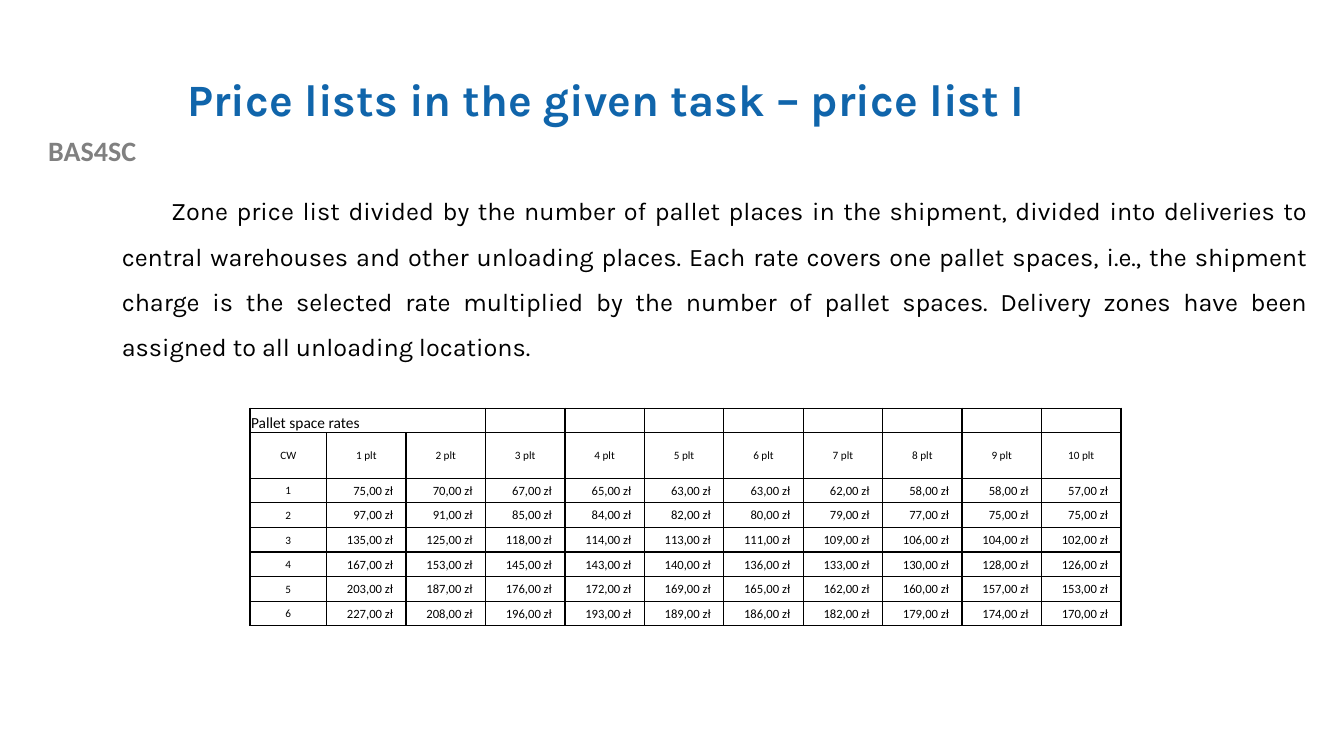
"""Build the slide with the pallet space price list."""
from lxml.etree import SubElement
from pptx import Presentation
from pptx.dml.color import RGBColor
from pptx.enum.text import MSO_ANCHOR, PP_ALIGN
from pptx.oxml.ns import qn
from pptx.util import Inches, Pt

COLORS = {"title": "1065AB", "label": "808080", "text": "000000", "border": "000000"}


def write(para, text, size, font="Calibri", color="text", bold=False, **layout):
    """Add one formatted run to a paragraph."""
    for name, value in layout.items():
        setattr(para, name, value)
    span = para.add_run()
    span.text = text
    for name, value in {"size": Pt(size), "name": font, "bold": bold}.items():
        setattr(span.font, name, value)
    span.font.color.rgb = RGBColor.from_string(COLORS[color])


def add_box(left, top, width, height, anchor=MSO_ANCHOR.TOP):
    """Add a wrapping text box and return its first paragraph."""
    box = page.shapes.add_textbox(Inches(left), Inches(top), Inches(width), Inches(height))
    box.text_frame.word_wrap = True
    box.text_frame.vertical_anchor = anchor
    return box.text_frame.paragraphs[0]


deck = Presentation()
deck.slide_width, deck.slide_height = Inches(13.33), Inches(7.5)
page = deck.slides.add_slide(deck.slide_layouts[6])

write(add_box(0, 1.28, 1.83, 0.44), "BAS4SC", 20, color="label", bold=True,
      alignment=PP_ALIGN.CENTER)
write(add_box(1.76, 0.4, 11, 1.22, MSO_ANCHOR.MIDDLE),
      "Price lists in the given task – price list I", 32, "Karla", "title", True,
      line_spacing=0.9)

description = add_box(1.11, 1.74, 11.96, 1.86)
description._p.get_or_add_pPr().set("indent", str(Inches(0.49)))
write(description,
      "Zone price list divided by the number of pallet places in the shipment, divided into "
      "deliveries to central warehouses and other unloading places. Each rate covers one pallet "
      "spaces, i.e., the shipment charge is the selected rate multiplied by the number of pallet "
      "spaces. Delivery zones have been assigned to all unloading locations.",
      18, "Karla", alignment=PP_ALIGN.JUSTIFY, line_spacing=1.5, space_after=Pt(6))

rates = [
    [75, 70, 67, 65, 63, 63, 62, 58, 58, 57],
    [97, 91, 85, 84, 82, 80, 79, 77, 75, 75],
    [135, 125, 118, 114, 113, 111, 109, 106, 104, 102],
    [167, 153, 145, 143, 140, 136, 133, 130, 128, 126],
    [203, 187, 176, 172, 169, 165, 162, 160, 157, 153],
    [227, 208, 196, 193, 189, 186, 182, 179, 174, 170],
]
rows = [["Pallet space rates"] + [""] * 10,
        ["CW"] + [f"{count} plt" for count in range(1, 11)]]
for zone, prices in enumerate(rates, 1):
    rows.append([str(zone)] + [f"{price},00 zł" for price in prices])

width, height, zone_width, header_height = 8.64, 2.16, 0.76, 0.45
table = page.shapes.add_table(len(rows), len(rows[0]), Inches(2.48), Inches(4.05),
                              Inches(width), Inches(height)).table
table.first_row = table.horz_banding = False
for index, column in enumerate(table.columns):
    column.width = Inches((width - zone_width) / 10 if index else zone_width)
for index, row in enumerate(table.rows):
    row.height = Inches(header_height if index == 1 else (height - header_height) / 7)

for row_index, texts in enumerate(rows):
    for column_index, text in enumerate(texts):
        cell = table.cell(row_index, column_index)
        is_price = row_index > 1 and column_index > 0
        cell_format = {
            "margin_left": Inches(0.01), "margin_top": Inches(0.01), "margin_bottom": 0,
            "margin_right": Inches(0.13 if is_price else 0.01),
            "vertical_anchor": MSO_ANCHOR.MIDDLE if row_index else MSO_ANCHOR.BOTTOM,
        }
        for name, value in cell_format.items():
            setattr(cell, name, value)
        properties = cell._tc.get_or_add_tcPr()
        for side in ("lnL", "lnR", "lnT", "lnB"):
            line = SubElement(properties, qn(f"a:{side}"), w=str(Pt(1)))
            fill = SubElement(line, qn("a:solidFill"))
            SubElement(fill, qn("a:srgbClr"), val=COLORS["border"])
        cell.fill.background()
        para = cell.text_frame.paragraphs[0]
        if not text:
            SubElement(para._p, qn("a:endParaRPr"), sz="900")
        elif row_index == 0:
            write(para, text, 11, alignment=PP_ALIGN.LEFT)
        elif is_price:
            write(para, text, 9, alignment=PP_ALIGN.RIGHT)
        else:
            write(para, text, 8, alignment=PP_ALIGN.CENTER)
table.cell(0, 0).merge(table.cell(0, 2))

deck.save("out.pptx")
